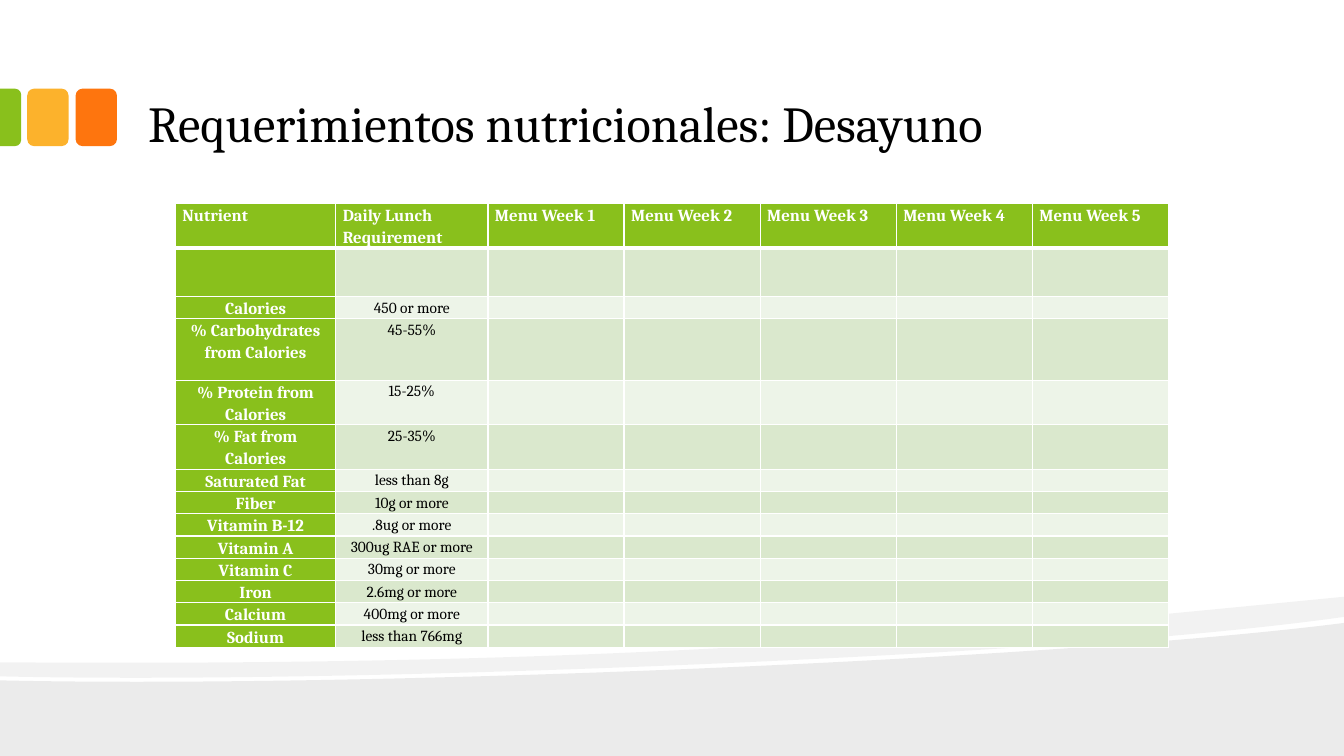
from lxml.etree import SubElement
from pptx import Presentation
from pptx.dml.color import RGBColor
from pptx.enum.shapes import MSO_SHAPE
from pptx.enum.text import MSO_ANCHOR, MSO_AUTO_SIZE, PP_ALIGN
from pptx.oxml.ns import qn
from pptx.util import Inches, Pt

COLORS = {
    "green": "89C01C", "amber": "FCB22C", "orange": "FE750E",
    "dark": "DAE8CD", "light": "EDF4E8", "black": "000000", "white": "FFFFFF",
}
FONT = "Cambria"
WIDTH, HEIGHT = 13.33, 7.5

HEADS = ["Nutrient", "Daily Lunch Requirement"] + [f"Menu Week {n}" for n in range(1, 6)]
NEEDS = [
    # nutrient, requirement, row height
    ("", "", 0.48),
    ("Calories", "450 or more", 0.19),
    ("% Carbohydrates from Calories", "45-55%", 0.61),
    ("% Protein from Calories", "15-25%", 0.39),
    ("% Fat from Calories", "25-35%", 0.4),
    ("Saturated Fat", "less than 8g", 0.2),
    ("Fiber", "10g or more", 0.2),
    ("Vitamin B-12", ".8ug or more", 0.19),
    ("Vitamin A", "300ug RAE or more", 0.2),
    ("Vitamin C", "30mg or more", 0.2),
    ("Iron", "2.6mg or more", 0.2),
    ("Calcium", "400mg or more", 0.2),
    ("Sodium", "less than 766mg", 0.2),
]


class Page:
    def __init__(self, deck):
        self.slide = deck.slides.add_slide(deck.slide_layouts[5])

    def color(self, name):
        return RGBColor.from_string(COLORS[name])

    def paint(self, shape, name):
        shape.shadow.inherit = False
        shape.fill.solid()
        shape.fill.fore_color.rgb = self.color(name)
        shape.line.fill.background()

    def style(self, para, size, name, bold=False):
        para.font.name, para.font.size, para.font.bold = FONT, Pt(size), bold
        para.font.color.rgb = self.color(name)

    def wave(self, start, steps, alpha):
        """Outline of steps: one point for a line, three for a cubic curve."""
        points = [(100 * x, 100 * y) for step in steps for x, y in step]
        outline = self.slide.shapes.build_freeform(
            100 * start[0], 100 * start[1], scale=Inches(0.01))
        outline.add_line_segments(points, close=True)
        shape = outline.convert_to_shape()
        self.paint(shape, "black")
        tint = shape.fill._xPr.find(qn("a:solidFill"))[0]
        SubElement(tint, qn("a:alpha"), val=str(alpha * 1000))

        # Join each run of three points into one curve
        lines = list(shape._element.iter(qn("a:lnTo")))
        for step in steps:
            group, lines = lines[:len(step)], lines[len(step):]
            if len(step) == 3:
                track = group[0].getparent()
                bend = SubElement(track, qn("a:cubicBezTo"))
                group[0].addprevious(bend)
                for line in group:
                    bend.append(line[0])
                    track.remove(line)

    def block(self, kind, left, top, width, height, name, turn=0):
        shape = self.slide.shapes.add_shape(
            kind, Inches(left), Inches(top), Inches(width), Inches(height))
        shape.rotation = turn
        self.paint(shape, name)
        return shape

    def title(self, text, left, top, width, height):
        box = self.slide.shapes.title
        box.left, box.top = Inches(left), Inches(top)
        box.width, box.height = Inches(width), Inches(height)
        frame = box.text_frame
        frame.text = text
        frame.word_wrap = True
        frame.auto_size = MSO_AUTO_SIZE.NONE
        frame.vertical_anchor = MSO_ANCHOR.BOTTOM
        frame.margin_left = frame.margin_right = Inches(0.13)
        frame.margin_top = frame.margin_bottom = Inches(0.07)
        para = frame.paragraphs[0]
        para.alignment = PP_ALIGN.LEFT
        self.style(para, 36, "black")

    def border(self, cell, side, width):
        line = SubElement(cell._tc.get_or_add_tcPr(), qn(f"a:ln{side}"), w=str(Pt(width)))
        fill = SubElement(line, qn("a:solidFill"))
        SubElement(fill, qn("a:srgbClr"), val=COLORS["white"])

    def cell(self, cell, text, row, col):
        # Borders, with a thick rule under the header
        for side in "LRTB":
            thick = (row, side) in ((0, "B"), (1, "T"))
            self.border(cell, side, 3 if thick else 1)
        head = row == 0 or col == 0
        cell.fill.solid()
        cell.fill.fore_color.rgb = self.color(
            "green" if head else "dark" if row % 2 else "light")
        cell.margin_left = cell.margin_right = Inches(0.07)
        cell.margin_top = cell.margin_bottom = 0
        para = cell.text_frame.paragraphs[0]
        if not text:
            para._p.get_or_add_endParaRPr().set("sz", "1100")
            return
        para.text = text
        para.alignment = PP_ALIGN.CENTER if row else PP_ALIGN.LEFT
        para.line_spacing, para.space_after = 1.15, Pt(10)
        self.style(para, 12 if head else 11, "white" if head else "black", head)

    def table(self, rows, widths, heights, left, top):
        table = self.slide.shapes.add_table(
            len(rows), len(widths), Inches(left), Inches(top),
            Inches(sum(widths)), Inches(sum(heights))).table
        table.horz_banding = False
        for col, width in zip(table.columns, widths):
            col.width = Inches(width)
        for row, height in zip(table.rows, heights):
            row.height = Inches(height)
        for r, texts in enumerate(rows):
            for c, text in enumerate(texts):
                self.cell(table.cell(r, c), text, r, c)


def main():
    deck = Presentation()
    deck.slide_width, deck.slide_height = Inches(WIDTH), Inches(HEIGHT)
    page = Page(deck)

    # Grey waves at the foot
    page.wave((WIDTH, 6.18), [
        [(WIDTH, HEIGHT)], [(0, HEIGHT)], [(0, 6.75)],
        [(3.52, 6.83), (10.42, 6.55), (WIDTH, 6.18)]], 8)
    page.wave((WIDTH, 5.92), [
        [(WIDTH, 6.12)],
        [(12.55, 6.23), (11.49, 6.33), (10.29, 6.41)],
        [(6.98, 6.63), (2.58, 6.77), (0, 6.71)],
        [(0, 6.57)],
        [(6.52, 6.62), (9.71, 6.27), (WIDTH, 5.92)]], 5)

    # Coloured tabs beside the title
    for left, name in ((0.75, "orange"), (0.27, "amber")):
        page.block(MSO_SHAPE.ROUNDED_RECTANGLE, left, 0.88, 0.41, 0.57, name)
    tab = page.block(MSO_SHAPE.ROUND_2_SAME_RECTANGLE, -0.18, 1.06, 0.57, 0.21, "green", 90)
    tab.adjustments[0] = 0.29

    page.title("Requerimientos nutricionales: Desayuno", 1.34, 0.16, 10.66, 1.42)

    # Nutrient table, with the menu weeks left open
    rows = [HEADS] + [[name, need] + [""] * 5 for name, need, _ in NEEDS]
    heights = [0.4] + [height for *_, height in NEEDS]
    page.table(rows, [1.59, 1.51] + [1.35] * 5, heights, 1.74, 2.02)

    deck.save("out.pptx")


if __name__ == "__main__":
    main()
